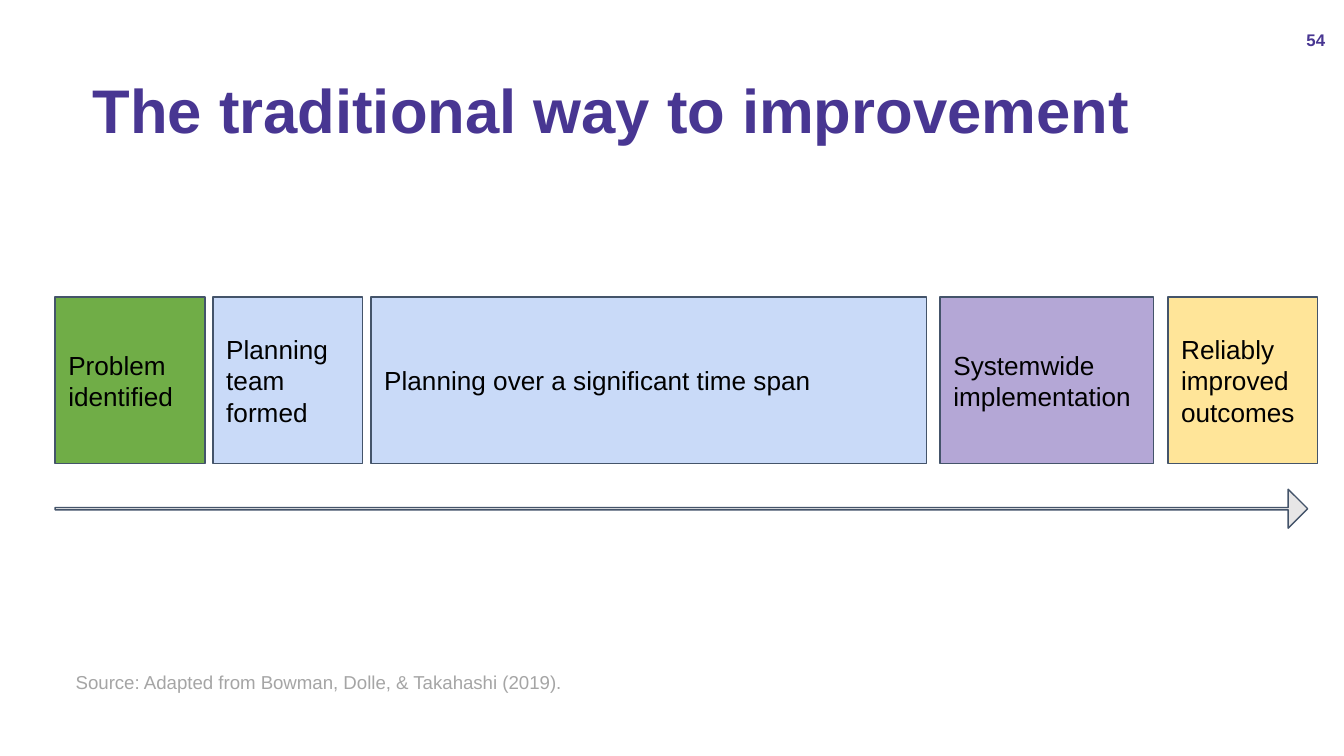
from pptx import Presentation
from pptx import util as u
from pptx.dml.color import RGBColor
from pptx.enum import shapes, text

PX = 4572  # EMU per px, 200 px to the inch
PURPLE, SLATE = "483692", "44546A"


def color(hex_value):
    return RGBColor.from_string(hex_value)


def write(shape, words, size, hex_value, bold=False, margins=(20, 20, 20, 20),
          anchor=text.MSO_ANCHOR.MIDDLE, align=text.PP_ALIGN.LEFT, spacing=1.0):
    frame = shape.text_frame
    frame.text = words
    left, top, right, bottom = (margin * PX for margin in margins)
    frame_format = {"word_wrap": True, "auto_size": text.MSO_AUTO_SIZE.NONE,
                    "vertical_anchor": anchor, "margin_left": left,
                    "margin_top": top, "margin_right": right, "margin_bottom": bottom}
    for name, value in frame_format.items():
        setattr(frame, name, value)
    paragraph = frame.paragraphs[0]
    paragraph.alignment = align
    paragraph.line_spacing = spacing
    font_format = {"name": "Arial", "size": u.Pt(size), "bold": bold}
    for name, value in font_format.items():
        setattr(paragraph.runs[0].font, name, value)
    paragraph.runs[0].font.color.rgb = color(hex_value)


presentation = Presentation()
presentation.slide_width, presentation.slide_height = 2000 * PX, 1125 * PX
slide = presentation.slides.add_slide(presentation.slide_layouts[5])

# Title
title = slide.shapes.title
title_box = {"left": 138, "top": 60, "width": 1724, "height": 218}
for name, value in title_box.items():
    setattr(title, name, value * PX)
write(title, "The traditional way to improvement", 33, PURPLE, bold=True,
      margins=(0, 8, 14, 8), spacing=0.9)

# Stages, then the time arrow below them
RECTANGLE = shapes.MSO_SHAPE.RECTANGLE
ARROW = shapes.MSO_SHAPE.RIGHT_ARROW
STAGE_TOP, STAGE_HEIGHT = 442, 248
stages = [
    ("Problem identified", 82, 223, "70AD47"),
    ("Planning team formed", 317, 223, "C9DAF8"),
    ("Planning over a significant time span", 552, 827, "C9DAF8"),
    ("Systemwide implementation", 1399, 318, "B4A7D6"),
    ("Reliably improved outcomes", 1738, 223, "FFE599"),
]
parts = [(RECTANGLE, words, left, STAGE_TOP, width, STAGE_HEIGHT, fill)
         for words, left, width, fill in stages]
parts.insert(4, (ARROW, None, 82, 728, 1864, 58, "E7E6E6"))

for kind, words, left, top, width, height, fill in parts:
    shape = slide.shapes.add_shape(kind, left * PX, top * PX, width * PX, height * PX)
    shape.shadow.inherit = False
    shape.fill.solid()
    shape.fill.fore_color.rgb = color(fill)
    shape.line.color.rgb = color(SLATE)
    shape.line.width = u.Pt(0.75)
    if words:
        write(shape, words, 14, "000000")
    else:
        shape.adjustments[0] = 0.06
        shape.adjustments[1] = 0.5

# Source line
source = slide.shapes.add_textbox(93 * PX, 978 * PX, 1286 * PX, 100 * PX)
write(source, "Source: Adapted from Bowman, Dolle, & Takahashi (2019).", 10, "A5A5A5",
      anchor=text.MSO_ANCHOR.TOP)

# Page number
number = slide.shapes.add_textbox(1902 * PX, 30 * PX, 84 * PX, 60 * PX)
write(number, "54", 9, PURPLE, bold=True, margins=(14, 8, 14, 8),
      align=text.PP_ALIGN.RIGHT)

presentation.save("out.pptx")
